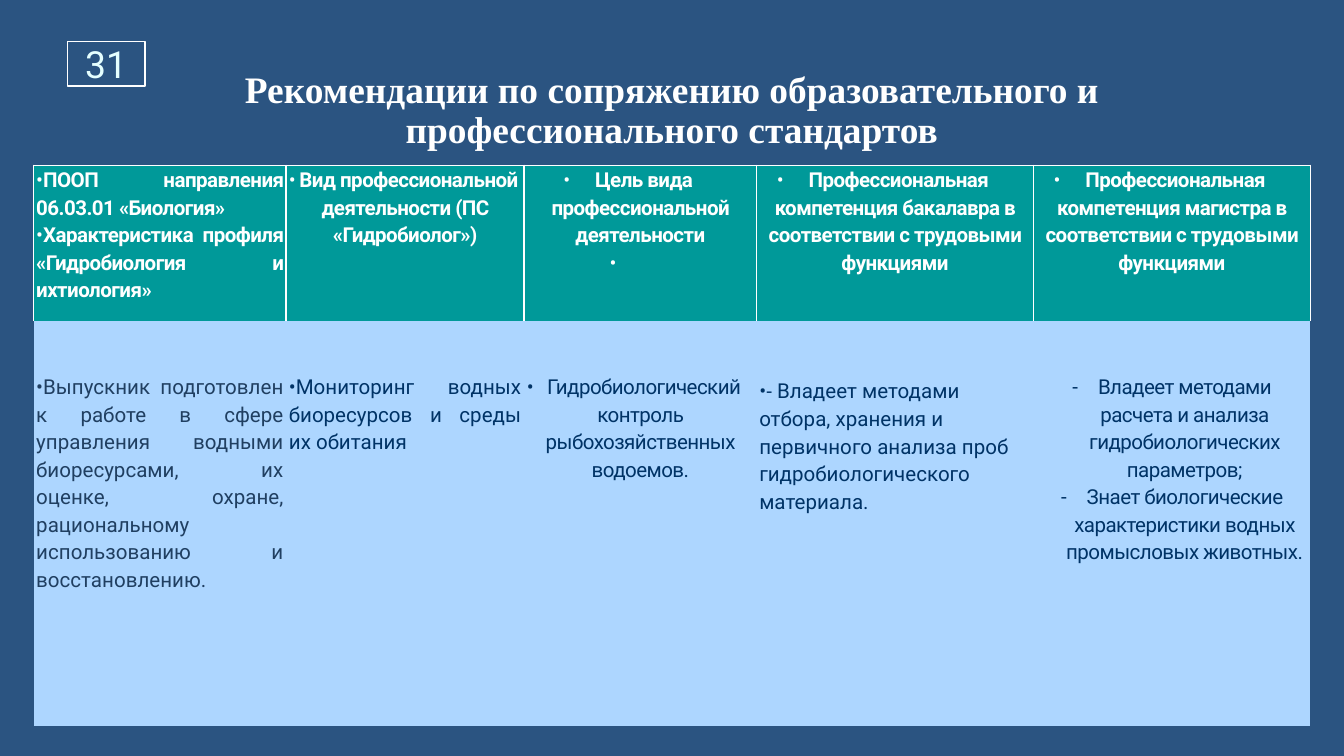
from dataclasses import dataclass

from lxml.etree import SubElement
from pptx import Presentation
from pptx.dml.color import RGBColor
from pptx.enum.shapes import MSO_SHAPE
from pptx.enum.text import MSO_ANCHOR, MSO_AUTO_SIZE, PP_ALIGN
from pptx.oxml.ns import qn
from pptx.table import _Cell
from pptx.text.text import Font, _Paragraph
from pptx.util import Inches, Pt

NAVY = RGBColor(0x2B, 0x54, 0x81)
WHITE = RGBColor(0xFF, 0xFF, 0xFF)
PALE = RGBColor(0xE5, 0xFF, 0xFF)
TEAL = RGBColor(0x00, 0x99, 0x99)
SKY = RGBColor(0xAD, 0xD6, 0xFF)
SLATE = RGBColor(0x20, 0x3F, 0x61)
INK = RGBColor(0x00, 0x33, 0x66)

SLIDE_WIDTH = 10
COLUMN_WIDTHS = (1.88, 1.77, 1.73, 2.06, 2.06)
ROW_HEIGHTS = (1.16, 3.01)
TIGHT = -30  # letter spacing, hundredths of a point
HEADER_FORMAT = {"name": "Roboto", "size": Pt(11), "bold": True}
BODY_FORMAT = {**HEADER_FORMAT, "bold": False}


@dataclass
class Entry:
    """One table cell: its bulleted paragraphs and how they are set."""
    items: tuple[str, ...]
    align: PP_ALIGN = PP_ALIGN.CENTER
    color: RGBColor = INK
    spacing: int = TIGHT
    bullet: str = "•"
    indent: float = 0
    top: float = 0.38
    lead: str = ""


HEADERS = [
    Entry(("ПООП направления 06.03.01 «Биология»",
           "Характеристика профиля «Гидробиология и ихтиология»"),
          PP_ALIGN.JUSTIFY, WHITE, top=0),
    Entry(("Вид профессиональной деятельности (ПС «Гидробиолог»)",), color=WHITE, top=0),
    Entry(("Цель вида профессиональной деятельности", " "), color=WHITE, top=0),
] + [
    Entry((f"Профессиональная компетенция {degree} в соответствии с трудовыми функциями",),
          color=WHITE, top=0)
    for degree in ("бакалавра", "магистра")
]

BODY = [
    Entry(("Выпускник подготовлен к работе в сфере управления водными биоресурсами, "
           "их оценке, охране, рациональному использованию и восстановлению.",),
          PP_ALIGN.JUSTIFY, SLATE, spacing=0),
    Entry(("Мониторинг водных биоресурсов и среды их обитания",),
          PP_ALIGN.JUSTIFY, spacing=0),
    Entry(("Гидробиологический контроль рыбохозяйственных водоемов.",)),
    Entry(("Владеет методами отбора, хранения и первичного анализа проб "
           "гидробиологического материала.",),
          PP_ALIGN.LEFT, spacing=0, top=0.4, lead="- "),
    Entry(("Владеет методами расчета и анализа гидробиологических параметров;",
           "Знает биологические характеристики водных промысловых животных."),
          bullet="-", indent=0.19),
]


def apply_format(font: Font, color: RGBColor, values: dict) -> None:
    for attribute, value in values.items():
        setattr(font, attribute, value)
    font.color.rgb = color


def add_run(paragraph: _Paragraph, text: str, color: RGBColor, values: dict,
            spacing: int = 0) -> None:
    run = paragraph.add_run()
    run.text = text
    apply_format(run.font, color, values)
    run.font._element.set("spc", str(spacing))


def add_bullet(paragraph: _Paragraph, character: str, indent: float) -> None:
    properties = paragraph._p.get_or_add_pPr()
    if indent:
        properties.set("marL", str(Inches(indent)))
        properties.set("indent", str(-Inches(indent)))
    SubElement(properties, qn("a:buFont"), typeface="Roboto")
    SubElement(properties, qn("a:buChar"), char=character)


def set_borders(cell: _Cell, white_sides: str) -> None:
    properties = cell._tc.get_or_add_tcPr()
    for side in "LRTB":
        line = SubElement(properties, qn(f"a:ln{side}"), w=str(Pt(1)))
        if side in white_sides:
            fill = SubElement(line, qn("a:solidFill"))
            SubElement(fill, qn("a:srgbClr"), val=str(WHITE))
        else:
            SubElement(line, qn("a:noFill"))


def fill_cell(cell: _Cell, entry: Entry, background: RGBColor, white_sides: str,
              values: dict) -> None:
    set_borders(cell, white_sides)
    cell.fill.solid()
    cell.fill.fore_color.rgb = background
    margins = {"left": 0.02, "right": 0.02, "top": entry.top, "bottom": 0}
    for side, length in margins.items():
        setattr(cell, f"margin_{side}", Inches(length))
    for number, text in enumerate(entry.items):
        frame = cell.text_frame
        paragraph = frame.add_paragraph() if number else frame.paragraphs[0]
        paragraph.alignment = entry.align
        paragraph.line_spacing = 1.15
        add_bullet(paragraph, entry.bullet, entry.indent)
        if entry.lead:
            add_run(paragraph, entry.lead, entry.color, {**values, "name": "Calibri"})
        add_run(paragraph, text, entry.color, values, entry.spacing)


def main() -> None:
    # Widescreen slide, 16 to 9
    presentation = Presentation()
    presentation.slide_width = Inches(SLIDE_WIDTH)
    presentation.slide_height = Inches(SLIDE_WIDTH * 9 / 16)
    slide = presentation.slides.add_slide(presentation.slide_layouts[5])
    slide.background.fill.solid()
    slide.background.fill.fore_color.rgb = NAVY

    # Title
    title = slide.shapes.title
    title.left, title.top = Inches(0.5), Inches(0.48)
    title.width, title.height = Inches(9), Inches(4.25)
    heading = title.text_frame
    heading.word_wrap = True
    heading.auto_size = MSO_AUTO_SIZE.NONE
    heading.vertical_anchor = MSO_ANCHOR.TOP
    heading.margin_left = heading.margin_right = Inches(0.3)
    heading_line = heading.paragraphs[0]
    heading_line.alignment = PP_ALIGN.CENTER
    heading_line.line_spacing = 0.9
    add_run(heading_line,
            "Рекомендации по сопряжению образовательного и профессионального стандартов",
            WHITE, {"name": "Times New Roman", "size": Pt(20), "bold": True})

    # Page number box
    page_box = slide.shapes.add_shape(MSO_SHAPE.RECTANGLE, Inches(0.5), Inches(0.31),
                                      Inches(0.58), Inches(0.33))
    page_box.shadow.inherit = False
    page_box.fill.background()
    page_box.line.color.rgb = WHITE
    page_box.line.width = Pt(0.75)
    page_box.text_frame.vertical_anchor = MSO_ANCHOR.MIDDLE
    page_number = page_box.text_frame.paragraphs[0]
    page_number.alignment = PP_ALIGN.CENTER
    add_run(page_number, "31", PALE, {"name": "Roboto", "size": Pt(20)})

    # Table of standards
    standards = slide.shapes.add_table(
        len(ROW_HEIGHTS), len(COLUMN_WIDTHS), Inches(0.25), Inches(1.23),
        Inches(sum(COLUMN_WIDTHS)), Inches(sum(ROW_HEIGHTS))).table
    standards.first_row = standards.horz_banding = False
    for column, width in zip(standards.columns, COLUMN_WIDTHS):
        column.width = Inches(width)
    for row, height in zip(standards.rows, ROW_HEIGHTS):
        row.height = Inches(height)
    row_styles = ((HEADERS, TEAL, "LRT", HEADER_FORMAT), (BODY, SKY, "", BODY_FORMAT))
    for row, (entries, background, white_sides, values) in zip(standards.rows, row_styles):
        for cell, entry in zip(row.cells, entries):
            fill_cell(cell, entry, background, white_sides, values)

    presentation.save("out.pptx")


if __name__ == "__main__":
    main()
